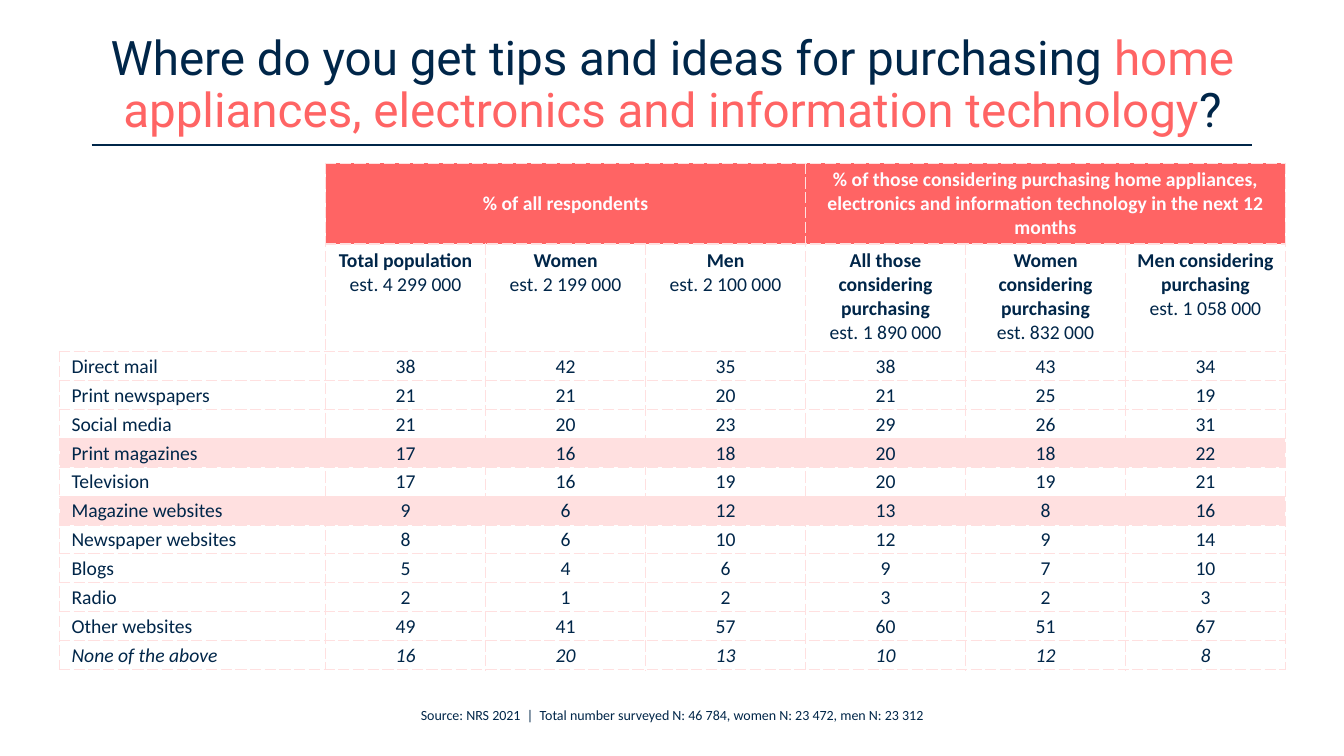
from copy import deepcopy

from lxml import etree
from pptx import Presentation
from pptx.dml.color import RGBColor
from pptx.enum.shapes import MSO_CONNECTOR
from pptx.enum.text import MSO_ANCHOR, MSO_AUTO_SIZE, PP_ALIGN
from pptx.oxml.ns import qn
from pptx.util import Inches, Pt

LEFT, CENTER = PP_ALIGN.LEFT, PP_ALIGN.CENTER
TOP, MIDDLE = MSO_ANCHOR.TOP, MSO_ANCHOR.MIDDLE
FIT_SHAPE = MSO_AUTO_SIZE.SHAPE_TO_FIT_TEXT
STRAIGHT = MSO_CONNECTOR.STRAIGHT

NAVY, CORAL, PINK, WHITE, OFF_WHITE = "002649", "FF6464", "FFE0E0", "FFFFFF", "FEFCFF"

GROUPS = [
    "% of all respondents",
    "% of those considering purchasing home appliances, electronics and "
    "information technology in the next 12 months",
]
AUDIENCES = [
    ("Total population", "est. 4 299 000"),
    ("Women", "est. 2 199 000"),
    ("Men", "est. 2 100 000"),
    ("All those considering purchasing", "est. 1 890 000"),
    ("Women considering purchasing", "est. 832 000"),
    ("Men considering purchasing", "est. 1 058 000"),
]
SOURCES = [
    ("Direct mail", 38, 42, 35, 38, 43, 34),
    ("Print newspapers", 21, 21, 20, 21, 25, 19),
    ("Social media", 21, 20, 23, 29, 26, 31),
    ("Print magazines", 17, 16, 18, 20, 18, 22),
    ("Television", 17, 16, 19, 20, 19, 21),
    ("Magazine websites", 9, 6, 12, 13, 8, 16),
    ("Newspaper websites", 8, 6, 10, 12, 9, 14),
    ("Blogs", 5, 4, 6, 9, 7, 10),
    ("Radio", 2, 1, 2, 3, 2, 3),
    ("Other websites", 49, 41, 57, 60, 51, 67),
    ("None of the above", 16, 20, 13, 10, 12, 8),
]
HIGHLIGHTED = {"Print magazines", "Magazine websites"}


def rgb(color):
    return RGBColor.from_string(color)


def add_text(paragraph, text, size=14, font="Calibri", color=NAVY, bold=False,
             italic=False, align=CENTER):
    paragraph.alignment = align
    run = paragraph.add_run()
    run.text = text
    run.font.size = Pt(size)
    run.font.name = font
    run.font.color.rgb = rgb(color)
    run.font.bold = bold
    run.font.italic = italic
    return run


def break_line(paragraph, run):
    paragraph.add_line_break()
    paragraph._p[-1].append(deepcopy(run._r.rPr))


def add_title(slide, left, top, width, height):
    frame = slide.shapes.add_textbox(left, top, width, height).text_frame
    frame.word_wrap = True
    frame.vertical_anchor = MIDDLE
    question = frame.paragraphs[0]
    question.line_spacing = 0.9
    for text, color in [
        ("Where do you get tips and ideas for purchasing ", NAVY),
        ("home appliances, electronics and information technology", CORAL),
        ("?", NAVY),
    ]:
        add_text(question, text, size=34, font="Roboto", color=color)


def add_rule(slide, left, top, width):
    rule = slide.shapes.add_connector(STRAIGHT, left, top, left + width, top)
    rule.line.color.rgb = rgb(NAVY)
    rule.line.width = Pt(1)
    etree.SubElement(rule._element.spPr, qn("a:effectLst"))


def style_cell(cell, fill, sides="LRTB", anchor=MIDDLE):
    properties = cell._tc.get_or_add_tcPr()
    for side in "LRTB":
        border = etree.SubElement(properties, qn(f"a:ln{side}"), w=str(Pt(1)))
        if side in sides:
            paint = etree.SubElement(border, qn("a:solidFill"))
            etree.SubElement(paint, qn("a:srgbClr"), val=PINK)
            etree.SubElement(border, qn("a:prstDash"), val="sysDash")
        else:
            etree.SubElement(border, qn("a:noFill"))
    cell.fill.solid()
    cell.fill.fore_color.rgb = rgb(fill)
    cell.vertical_anchor = anchor


def fill_headers(table):
    for row, sides in enumerate(["R", "RB"]):
        style_cell(table.cell(row, 0), WHITE, sides)
    table.cell(0, 0).merge(table.cell(1, 0))

    for column, (audience, estimate) in enumerate(AUDIENCES, 1):
        style_cell(table.cell(0, column), CORAL)
        cell = table.cell(1, column)
        style_cell(cell, WHITE, anchor=TOP)
        heading = cell.text_frame.paragraphs[0]
        break_line(heading, add_text(heading, audience, bold=True))
        add_text(heading, estimate)

    span = len(AUDIENCES) // len(GROUPS)
    for index, group in enumerate(GROUPS):
        first = 1 + index * span
        cell = table.cell(0, first)
        cell.merge(table.cell(0, first + span - 1))
        add_text(cell.text_frame.paragraphs[0], group, color=OFF_WHITE, bold=True)


def fill_body(table):
    for row, values in enumerate(SOURCES, 2):
        fill = PINK if values[0] in HIGHLIGHTED else WHITE
        for column, value in enumerate(values):
            cell = table.cell(row, column)
            style_cell(cell, fill)
            cell.margin_left = Inches(0.01 if column else 0.12)
            cell.margin_right = cell.margin_top = Inches(0.01)
            cell.margin_bottom = 0
            add_text(cell.text_frame.paragraphs[0], str(value),
                     italic=values[0] == "None of the above",
                     align=CENTER if column else LEFT)


def add_survey_table(slide, left, top, width, height):
    table = slide.shapes.add_table(
        len(SOURCES) + 2, len(AUDIENCES) + 1, left, top, width, height).table
    table.first_row = table.horz_banding = False

    label_width = Inches(2.64)
    for column in table.columns:
        column.width = int((width - label_width) / len(AUDIENCES))
    table.columns[0].width = label_width

    header_heights = [Inches(0.71), Inches(1.07)]
    for row in table.rows:
        row.height = int((height - sum(header_heights)) / len(SOURCES))
    for row, header_height in enumerate(header_heights):
        table.rows[row].height = header_height

    fill_headers(table)
    fill_body(table)


def add_source_note(slide, left, top, width, height):
    frame = slide.shapes.add_textbox(left, top, width, height).text_frame
    frame.word_wrap = False
    frame.auto_size = FIT_SHAPE
    add_text(frame.paragraphs[0],
             "Source: NRS 2021  |  Total number surveyed N: 46 784, "
             "women N: 23 472, men N: 23 312", size=10)


def main():
    deck = Presentation()
    deck.slide_width, deck.slide_height = Inches(13.33), Inches(7.5)
    slide = deck.slides.add_slide(deck.slide_layouts[6])
    add_title(slide, Inches(0.92), Inches(0.32), Inches(11.5), Inches(1.07))
    add_survey_table(slide, Inches(0.59), Inches(1.62), Inches(12.16), Inches(4.93))
    add_rule(slide, Inches(0.91), Inches(1.44), Inches(11.51))
    add_source_note(slide, Inches(4.02), Inches(6.96), Inches(5.29), Inches(0.27))
    deck.save("out.pptx")


if __name__ == "__main__":
    main()
